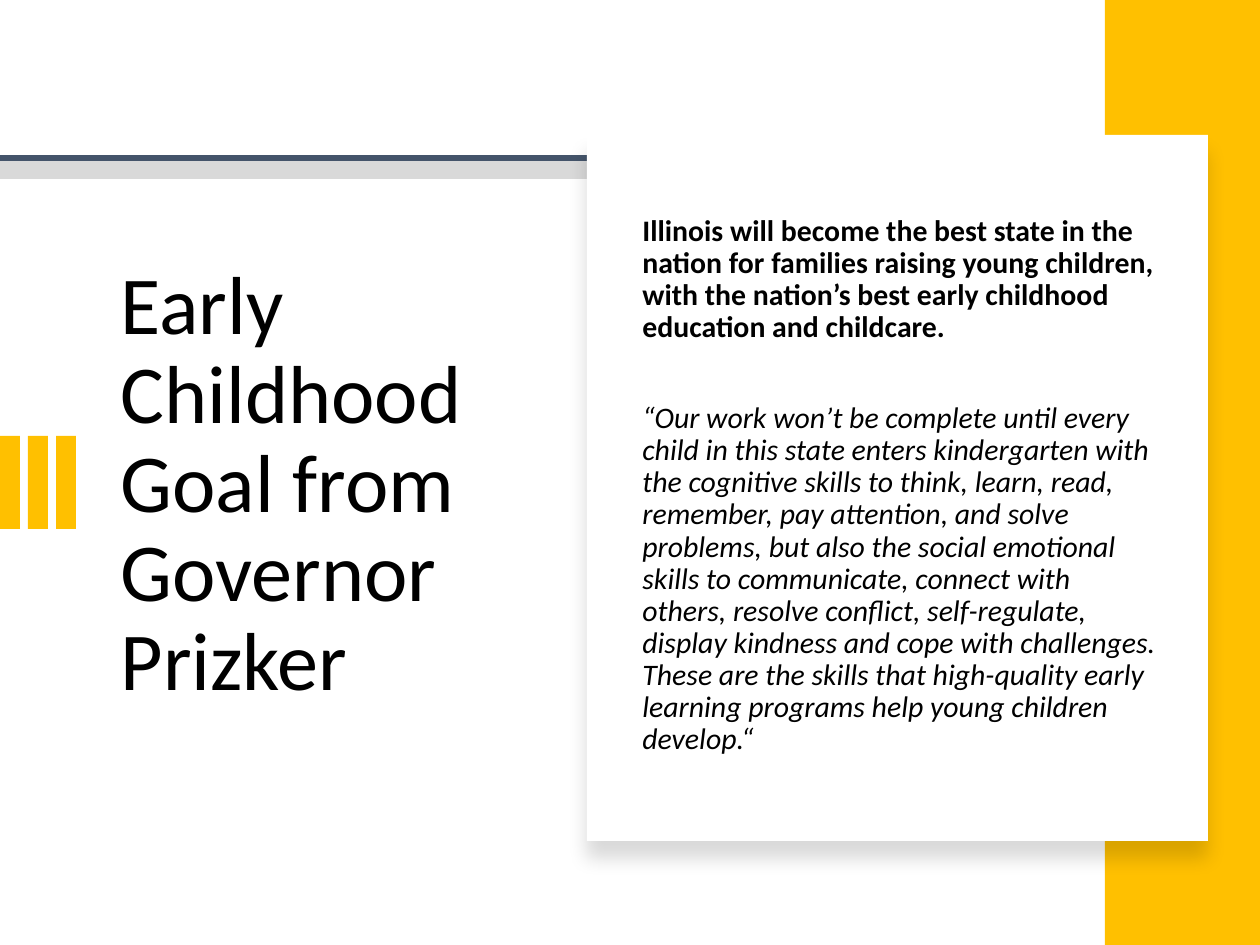
import pptx
import pptx.util
import pptx.dml.color
import pptx.enum.shapes
import pptx.enum.text
import pptx.oxml

COLORS = {"gold": "FFC000", "white": "FFFFFF", "black": "000000",
          "navy": "44546A", "gray": "D9D9D9"}
FONT = "Calibri"
DRAWING = 'xmlns:a="http://schemas.openxmlformats.org/drawingml/2006/main"'
GOAL = ("Illinois will become the best state in the nation for families raising young "
        "children, with the nation’s best early childhood education and childcare.")
QUOTE = ("“Our work won’t be complete until every child in this state enters kindergarten "
         "with the cognitive skills to think, learn, read, remember, pay attention, and "
         "solve problems, but also the social emotional skills to communicate, connect "
         "with others, resolve conflict, self-regulate, display kindness and cope with "
         "challenges. These are the skills that high-quality early learning programs help "
         "young children develop.“")


def px(count):
    """Turn pixels at 126 to the inch into EMU."""
    return pptx.util.Emu(round(count * 914400 / 126))


def color(name):
    """Look up a named colour."""
    return pptx.dml.color.RGBColor.from_string(COLORS[name])


def add_effects(shape, content=""):
    """Give a shape an effect list, empty by default."""
    shape._element.spPr.append(
        pptx.oxml.parse_xml(f"<a:effectLst {DRAWING}>{content}</a:effectLst>"))


def add_rule(page, y, right, name, weight):
    """Draw a horizontal rule from the left edge."""
    rule = page.shapes.add_connector(
        pptx.enum.shapes.MSO_CONNECTOR.STRAIGHT, px(0), px(y), px(right), px(y))
    rule.line.color.rgb = color(name)
    rule.line.width = pptx.util.Pt(weight)
    add_effects(rule)


def add_block(page, left, top, width, height, name):
    """Draw a plain filled rectangle."""
    block = page.shapes.add_shape(
        pptx.enum.shapes.MSO_SHAPE.RECTANGLE, px(left), px(top), px(width), px(height))
    block.fill.solid()
    block.fill.fore_color.rgb = color(name)
    block.line.fill.background()
    return block


def add_card(page, left, top, width, height):
    """Draw the white card with a soft shadow below it."""
    card = add_block(page, left, top, width, height, "white")
    add_effects(card, '<a:outerShdw blurRad="139700" dist="127000" dir="5400000" '
                      'algn="t" rotWithShape="0"><a:srgbClr val="000000">'
                      '<a:alpha val="15000"/></a:srgbClr></a:outerShdw>')


def place_text(box, left, top, width, height):
    """Position a text box and centre its text vertically."""
    box.left, box.top, box.width, box.height = px(left), px(top), px(width), px(height)
    frame = box.text_frame
    frame.word_wrap = True
    frame.auto_size = pptx.enum.text.MSO_AUTO_SIZE.NONE
    frame.vertical_anchor = pptx.enum.text.MSO_ANCHOR.MIDDLE
    return frame


def add_span(para, text, size, bold=False, italic=False):
    """Add one formatted run to a left-aligned paragraph."""
    para.alignment = pptx.enum.text.PP_ALIGN.LEFT
    para.line_spacing = 0.9
    span = para.add_run()
    span.text = text
    span.font.name = FONT
    span.font.size = pptx.util.Pt(size)
    span.font.bold = bold
    span.font.italic = italic
    span.font.color.rgb = color("black")


def add_title(page):
    """Fill the title placeholder."""
    para = place_text(page.shapes.title, 108, 184, 402, 604).paragraphs[0]
    add_span(para, "Early Childhood Goal from Governor", 47)
    para.add_line_break()
    add_span(para, "Prizker", 47)


def add_body(page):
    """Write the goal and the quotation on the card."""
    box = page.shapes.add_textbox(0, 0, 0, 0)
    frame = place_text(box, 630, 184, 544, 604)
    add_span(frame.paragraphs[0], GOAL, 17, bold=True)
    quote = frame.add_paragraph()
    quote.space_before = pptx.util.Pt(33.5)
    add_span(quote, QUOTE, 17, italic=True)


def main():
    """Build and save the slide."""
    deck = pptx.Presentation()
    deck.slide_width, deck.slide_height = px(1260), px(945)
    page = deck.slides.add_slide(deck.slide_layouts[5])
    add_rule(page, 168, 1260, "gray", 12.5)
    add_rule(page, 158, 1260, "navy", 3)
    add_title(page)
    for index in range(3):
        bar = add_block(page, 28 * index, 436, 20, 93, "gold")
        bar.shadow.inherit = False
    panel = add_block(page, 1105, 0, 155, 945, "gold")
    panel.shadow.inherit = False
    add_card(page, 587, 135, 621, 706)
    add_body(page)
    deck.save("out.pptx")


if __name__ == "__main__":
    main()
